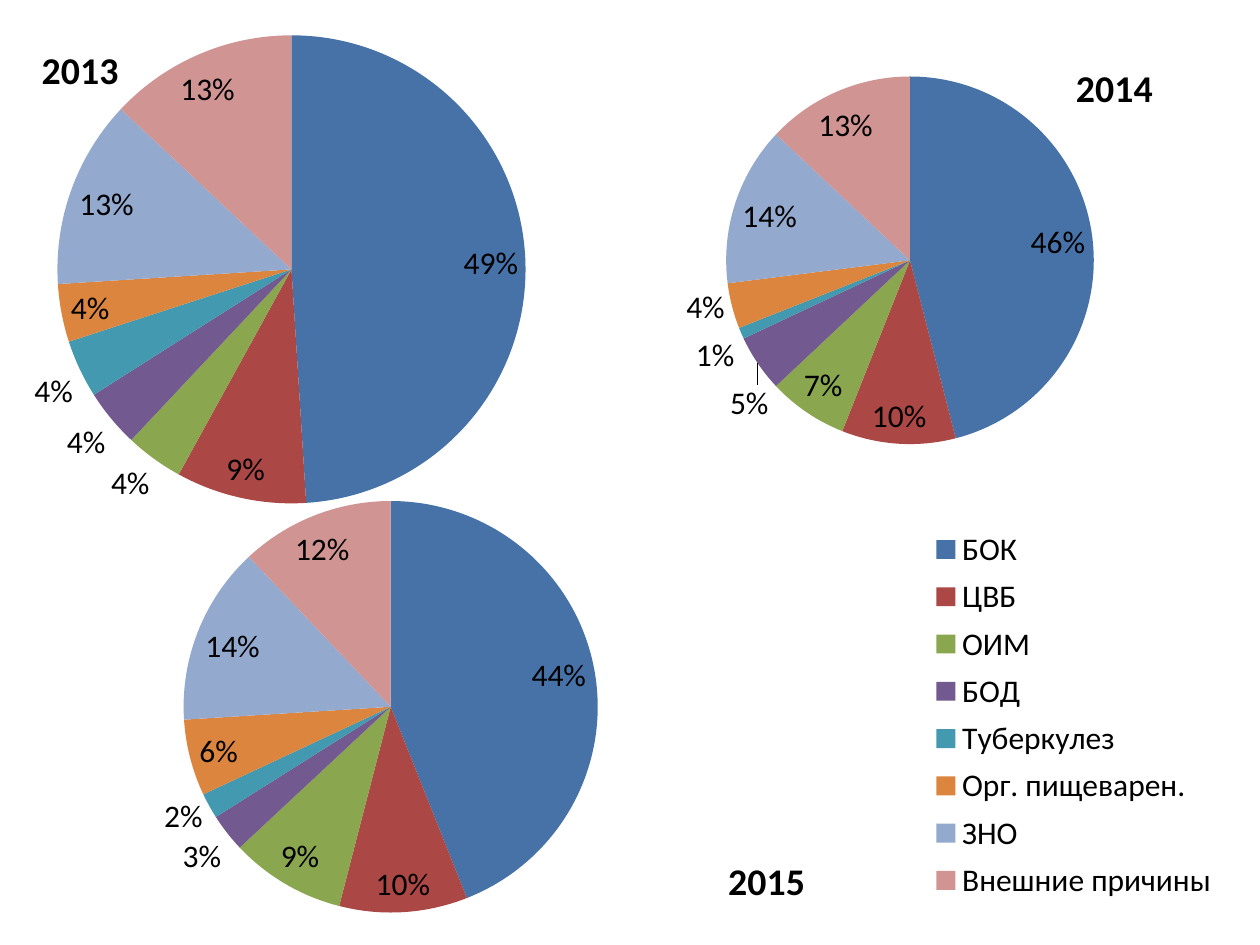
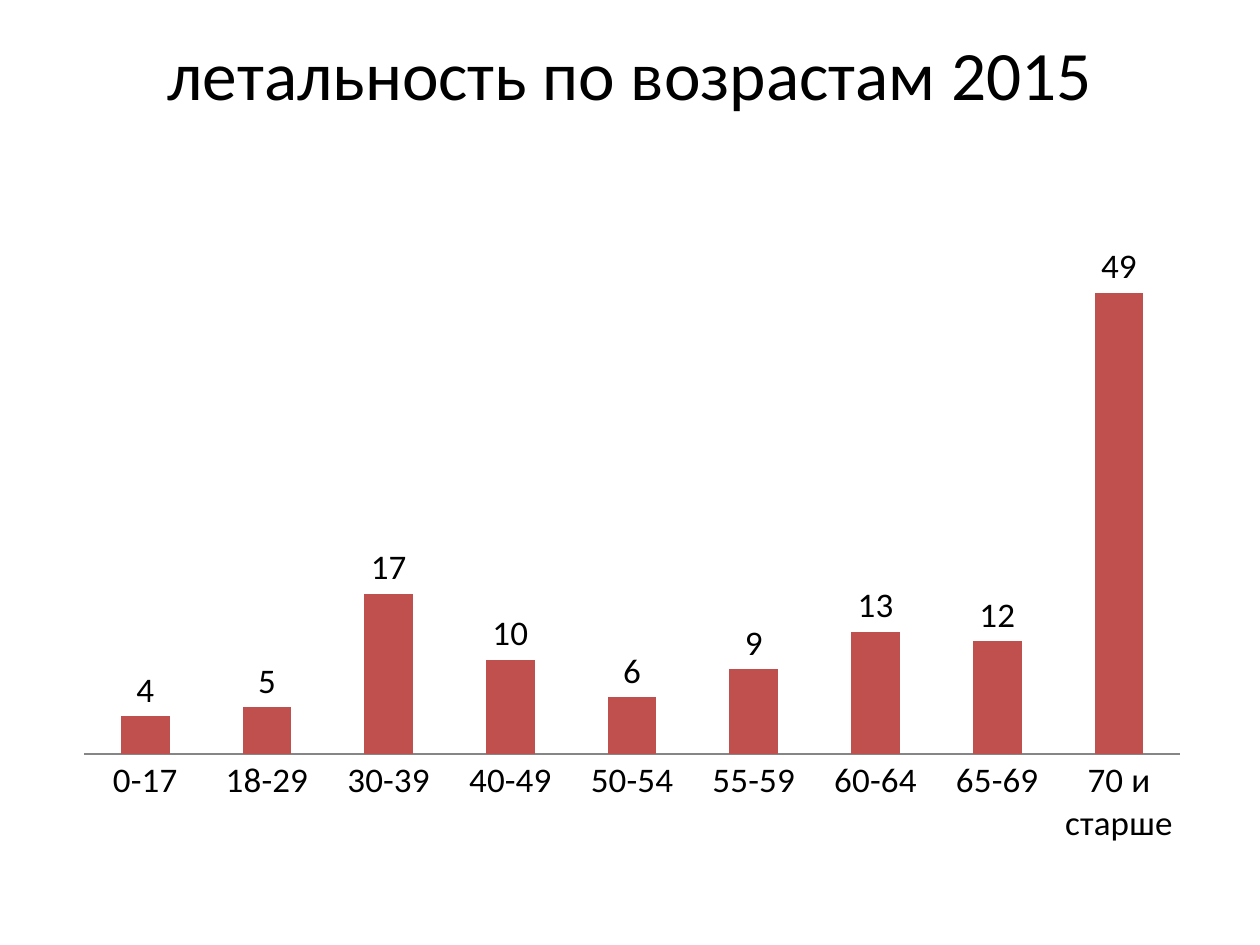
from lxml import etree
from pptx import Presentation
from pptx.chart.data import CategoryChartData
from pptx.dml.color import RGBColor
from pptx.enum.chart import XL_CHART_TYPE as CT, XL_LABEL_POSITION as LP
from pptx.enum.chart import XL_LEGEND_POSITION, XL_TICK_MARK
from pptx.enum.text import MSO_ANCHOR, PP_ALIGN
from pptx.oxml import parse_xml
from pptx.oxml.ns import nsdecls, qn
from pptx.util import Pt

FONT = "Calibri"
BLACK, AXIS = "000000", "868686"
BARS = ["4F81BD", "C0504D"]
SLICES = ["4672A8", "AB4744", "8AA64F", "725990",
          "4299B0", "DC853E", "93A9CE", "D09493"]


def set_font(font, size, bold=False, color=BLACK):
    for name, value in dict(name=FONT, size=Pt(size), bold=bold).items():
        setattr(font, name, value)
    font.color.rgb = RGBColor.from_string(color)


def place(el, index, x, y, w=None, h=None, inner=False):
    """Give a chart part a manual layout in fractions of the chart."""
    for old in el.findall(qn("c:layout")):
        el.remove(old)
    layout = etree.Element(qn("c:layout"))
    manual = etree.SubElement(layout, qn("c:manualLayout"))
    values = dict(layoutTarget="inner" if inner else None,
                  xMode="edge", yMode="edge", x=x, y=y, w=w, h=h)
    for tag, value in values.items():
        if value is not None:
            etree.SubElement(manual, qn("c:" + tag)).set("val", str(value))
    el.insert(index, layout)


prs = Presentation()
prs.slide_width, prs.slide_height = Pt(720), Pt(540)

# Slide 1: causes of death, one pie a year
s = prs.slides.add_slide(prs.slide_layouts[6])
causes = ["БОК", "ЦВБ", "ОИМ", "БОД", "Туберкулез",
          "Орг. пищеварен.", "ЗНО", "Внешние причины"]
numbers = [str(i) for i in range(1, 9)]
# year, categories, values, chart box, plot layout, title layout
pies = [
    ("2013", causes, [49, 9, 4, 4, 4, 4, 13, 13],
     (14.4, 15.1, 691.9, 510.5), (0.001, 0.01, 0.438, 0.524), (0.008, 0.011)),
    ("2014", numbers, [46, 10, 7, 5, 1, 4, 14, 13],
     (320.4, 20.9, 510.5, 289.4), (0.088, 0.079, 0.606, 0.726), (0.569, 0.036)),
    ("2015", numbers, [44, 10, 9, 3, 2, 6, 14, 12],
     (2.2, 100.1, 527, 424.1), (0.097, 0.452, 0.645, 0.558), (0.778, 0.912)),
]
for year, cats, values, box, plot_at, title_at in pies:
    data = CategoryChartData()
    data.categories = cats
    data.add_series(year, values)
    chart = s.shapes.add_chart(CT.PIE, *map(Pt, box), data).chart
    set_font(chart.font, 18)
    root = chart.element
    root.find(qn("c:chart")).addnext(parse_xml(
        f'<c:spPr {nsdecls("c", "a")}><a:noFill/><a:ln><a:noFill/></a:ln></c:spPr>'))

    # Year as chart title
    chart.has_title = True
    tf = chart.chart_title.text_frame
    tf.text = year
    set_font(tf.paragraphs[0].runs[0].font, 21.6, bold=True)
    chart.chart_title.include_in_layout = False
    place(root.find(".//" + qn("c:title")), 1, *title_at)
    place(root.find(".//" + qn("c:plotArea")), 0, *plot_at, inner=True)

    # Slices and percent labels
    series = chart.plots[0].series[0]
    for i, color in enumerate(SLICES):
        fill = series.points[i].format.fill
        fill.solid()
        fill.fore_color.rgb = RGBColor.from_string(color)
    labels = series.data_labels
    for name, value in dict(show_percentage=True, show_value=False,
                            number_format="0%", number_format_is_linked=False,
                            position=LP.BEST_FIT).items():
        setattr(labels, name, value)
    set_font(labels.font, 18)

    # One legend serves all three pies
    chart.has_legend = cats is causes
    if chart.has_legend:
        chart.legend.position = XL_LEGEND_POSITION.RIGHT
        chart.legend.include_in_layout = False
        set_font(chart.legend.font, 18)
        place(root.find(".//" + qn("c:legend")), 1, 0.746, 0.554, 0.24, 0.434)

# Slide 2: deaths by age
s = prs.slides.add_slide(prs.slide_layouts[5])
title = s.shapes.title
for name, value in dict(left=36, top=21.6, width=648, height=90).items():
    setattr(title, name, Pt(value))
tf = title.text_frame
tf.text = "летальность по возрастам 2015"
tf.vertical_anchor, tf.margin_top = MSO_ANCHOR.TOP, Pt(0)
p = tf.paragraphs[0]
p.alignment, p.line_spacing = PP_ALIGN.CENTER, 0.94
set_font(p.runs[0].font, 39.6)

data = CategoryChartData()
data.categories = ["0-17", "18-29", "30-39", "40-49", "50-54",
                   "55-59", "60-64", "65-69", "70 и старше"]
data.add_series("Series 1", [])
data.add_series("Series 2", [4, 5, 17, 10, 6, 9, 13, 12, 49])
chart = s.shapes.add_chart(CT.COLUMN_CLUSTERED, Pt(36), Pt(94.3),
                           Pt(648), Pt(388.1), data).chart
chart.has_title = chart.has_legend = False
set_font(chart.font, 20)
place(chart.element.find(".//" + qn("c:plotArea")), 0,
      0.019, 0.036, 0.966, 0.845, inner=True)

# Columns and value labels
plot = chart.plots[0]
plot.gap_width, plot.overlap, plot.vary_by_categories = 150, -25, False
for series, color in zip(plot.series, BARS):
    series.format.fill.solid()
    series.format.fill.fore_color.rgb = RGBColor.from_string(color)
    labels = series.data_labels
    labels.show_value, labels.position = True, LP.OUTSIDE_END
    set_font(labels.font, 20)

# Axes
axis = chart.value_axis
for name, value in dict(minimum_scale=0, maximum_scale=60, visible=False,
                        has_major_gridlines=False).items():
    setattr(axis, name, value)
axis = chart.category_axis
axis.major_tick_mark = axis.minor_tick_mark = XL_TICK_MARK.NONE
axis.format.line.color.rgb = RGBColor.from_string(AXIS)
axis.format.line.width = Pt(0.75)
set_font(axis.tick_labels.font, 20)

prs.save("out.pptx")
